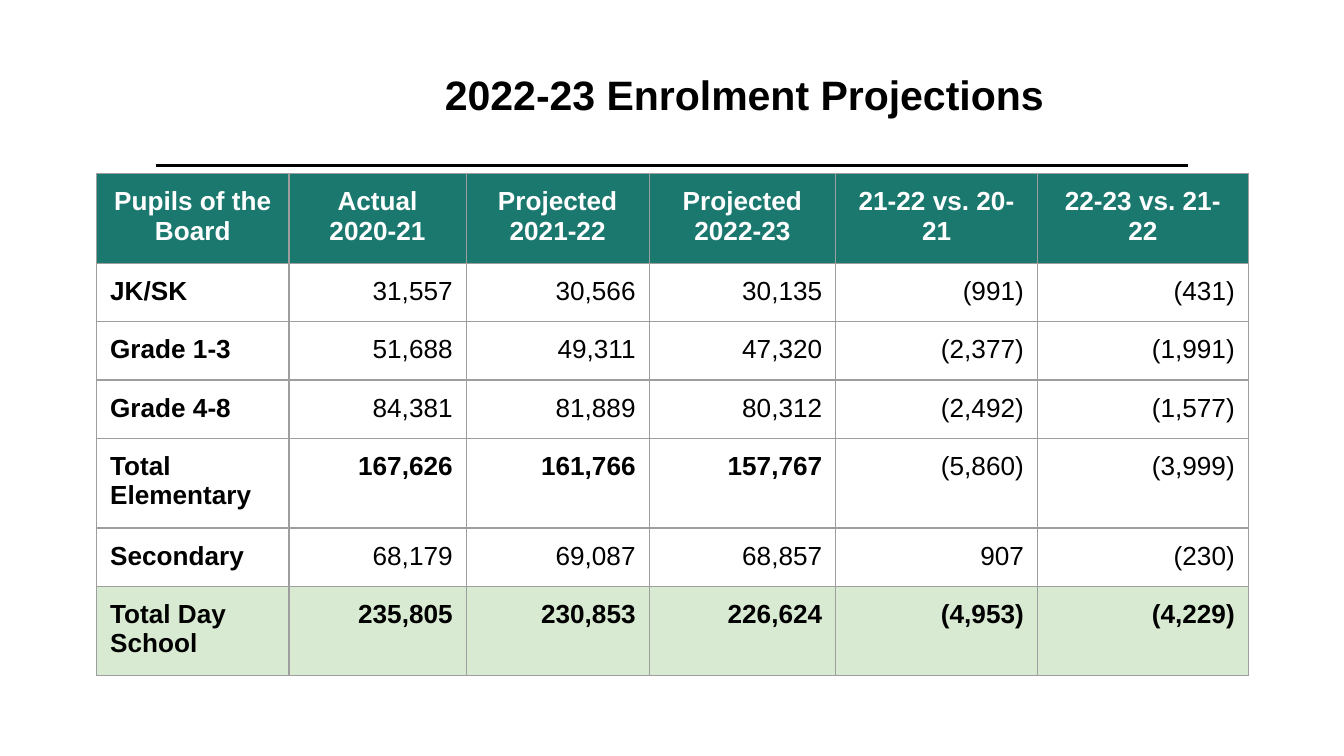
from lxml.etree import SubElement
from pptx import Presentation
from pptx.dml.color import RGBColor
from pptx.enum.shapes import MSO_CONNECTOR as Connector
from pptx.enum.text import MSO_ANCHOR as Anchor, PP_ALIGN as Align
from pptx.oxml import parse_xml
from pptx.oxml.ns import nsdecls, qn
from pptx.util import Pt

BLACK = RGBColor(0x00, 0x00, 0x00)
WHITE = RGBColor(0xFF, 0xFF, 0xFF)
TEAL = RGBColor(0x1B, 0x78, 0x6E)
PALE_GREEN = RGBColor(0xD9, 0xEA, 0xD3)
GRID_GREY = RGBColor(0x9E, 0x9E, 0x9E)
FONT = "Arial"
INSET = Pt(7.2)

COLUMN_WIDTHS = [103, 95, 98, 100, 108, 113]
TALL_ROW, SHORT_ROW = 48, 31.2
HEADINGS = ["Pupils of the Board", "Actual 2020-21", "Projected 2021-22",
            "Projected 2022-23", "21-22 vs. 20-21", "22-23 vs. 21-22"]
# Each row: values, number of leading bold cells
ENROLMENT = [
    (["JK/SK", "31,557", "30,566", "30,135", "(991)", "(431)"], 1),
    (["Grade 1-3", "51,688", "49,311", "47,320", "(2,377)", "(1,991)"], 1),
    (["Grade 4-8", "84,381", "81,889", "80,312", "(2,492)", "(1,577)"], 1),
    (["Total Elementary", "167,626", "161,766", "157,767", "(5,860)", "(3,999)"], 4),
    (["Secondary", "68,179", "69,087", "68,857", "907", "(230)"], 1),
    (["Total Day School", "235,805", "230,853", "226,624", "(4,953)", "(4,229)"], 6),
]


def write(frame, text, size, color, bold, align):
    paragraph = frame.paragraphs[0]
    paragraph.alignment = align
    run = paragraph.add_run()
    run.text = text
    run.font.name = FONT
    run.font.size = Pt(size)
    run.font.bold = bold
    run.font.color.rgb = color


def add_title(slide, text):
    title = slide.shapes.add_textbox(Pt(116.6), Pt(12.2), Pt(564.5), Pt(76.3))
    frame = title.text_frame
    frame.word_wrap = True
    frame.vertical_anchor = Anchor.MIDDLE
    frame.margin_left = frame.margin_right = INSET
    frame.margin_top = frame.margin_bottom = INSET
    write(frame, text, 22, BLACK, True, Align.CENTER)


def add_rule(slide):
    rule = slide.shapes.add_connector(
        Connector.STRAIGHT, Pt(83.5), Pt(88.6), Pt(636.5), Pt(88.6))
    rule.line.color.rgb = BLACK
    rule.line.width = Pt(1.5)
    SubElement(rule._element.spPr, qn("a:effectLst"))


def add_borders(cell):
    properties = cell._tc.get_or_add_tcPr()
    for position, side in enumerate("LRTB"):
        properties.insert(position, parse_xml(
            f'<a:ln{side} {nsdecls("a")} w="{Pt(0.75)}"><a:solidFill>'
            f'<a:srgbClr val="{GRID_GREY}"/></a:solidFill></a:ln{side}>'))


def fill_cell(cell, text, color, bold, align, fill=None):
    cell.margin_left = cell.margin_right = INSET
    cell.margin_top = cell.margin_bottom = INSET
    write(cell.text_frame, text, 14, color, bold, align)
    if fill is None:
        cell.fill.background()
    else:
        cell.fill.solid()
        cell.fill.fore_color.rgb = fill
    add_borders(cell)


def add_enrolment_table(slide):
    heights = [TALL_ROW] + [
        TALL_ROW if values[0].startswith("Total") else SHORT_ROW
        for values, _ in ENROLMENT]
    table = slide.shapes.add_table(
        len(heights), len(HEADINGS), Pt(51.8), Pt(93),
        Pt(sum(COLUMN_WIDTHS)), Pt(sum(heights))).table
    table.horz_banding = False
    for column, width in zip(table.columns, COLUMN_WIDTHS):
        column.width = Pt(width)
    for row, height in zip(table.rows, heights):
        row.height = Pt(height)

    for column, heading in enumerate(HEADINGS):
        fill_cell(table.cell(0, column), heading, WHITE, True, Align.CENTER, TEAL)
    for row, (values, bold_count) in enumerate(ENROLMENT, start=1):
        fill = PALE_GREEN if row == len(ENROLMENT) else None
        for column, value in enumerate(values):
            align = Align.RIGHT if column else Align.LEFT
            fill_cell(table.cell(row, column), value, BLACK,
                      column < bold_count, align, fill)


def main():
    deck = Presentation()
    deck.slide_width, deck.slide_height = Pt(720), Pt(405)
    slide = deck.slides.add_slide(deck.slide_layouts[6])
    add_title(slide, "2022-23 Enrolment Projections")
    add_rule(slide)
    add_enrolment_table(slide)
    deck.save("out.pptx")


if __name__ == "__main__":
    main()
